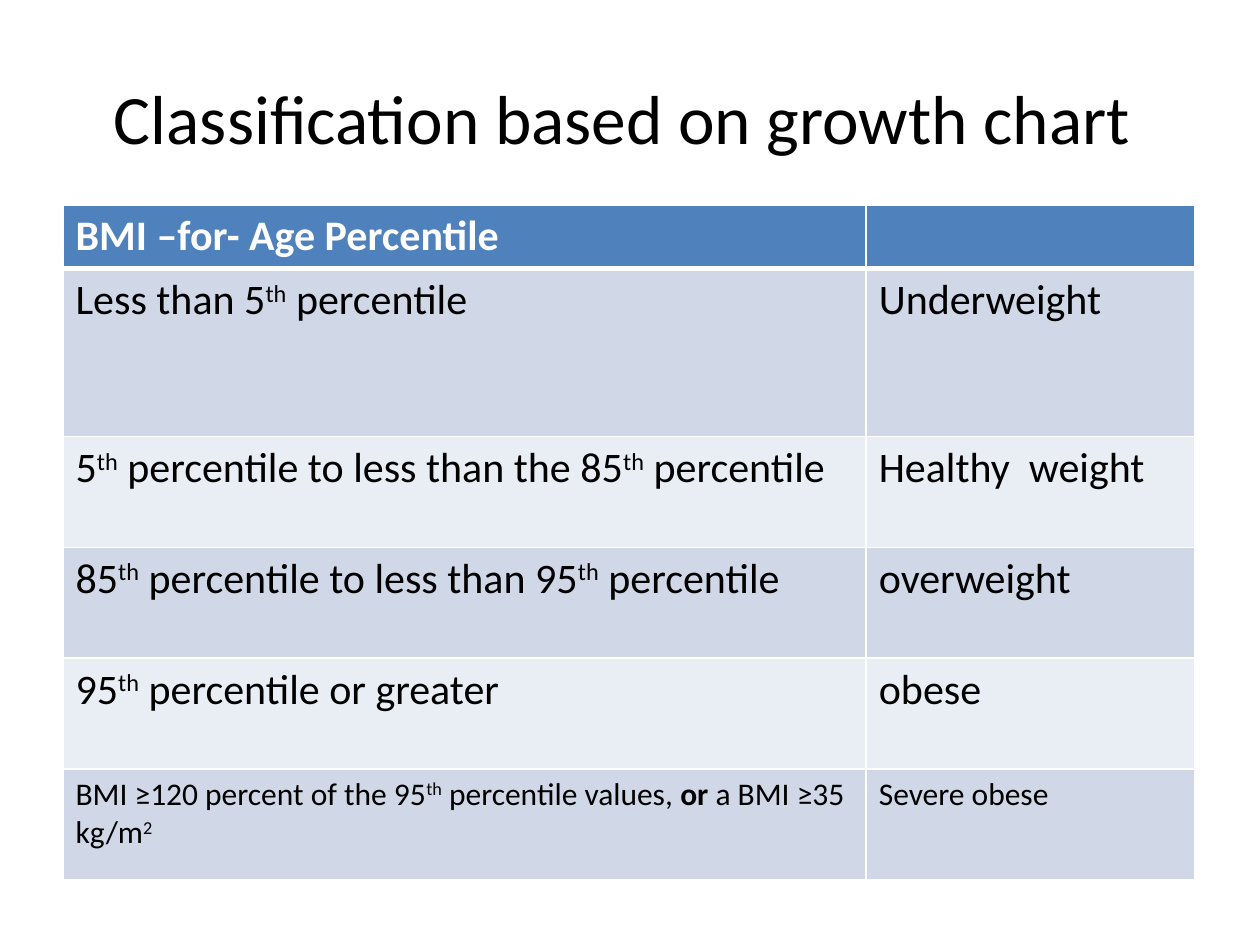
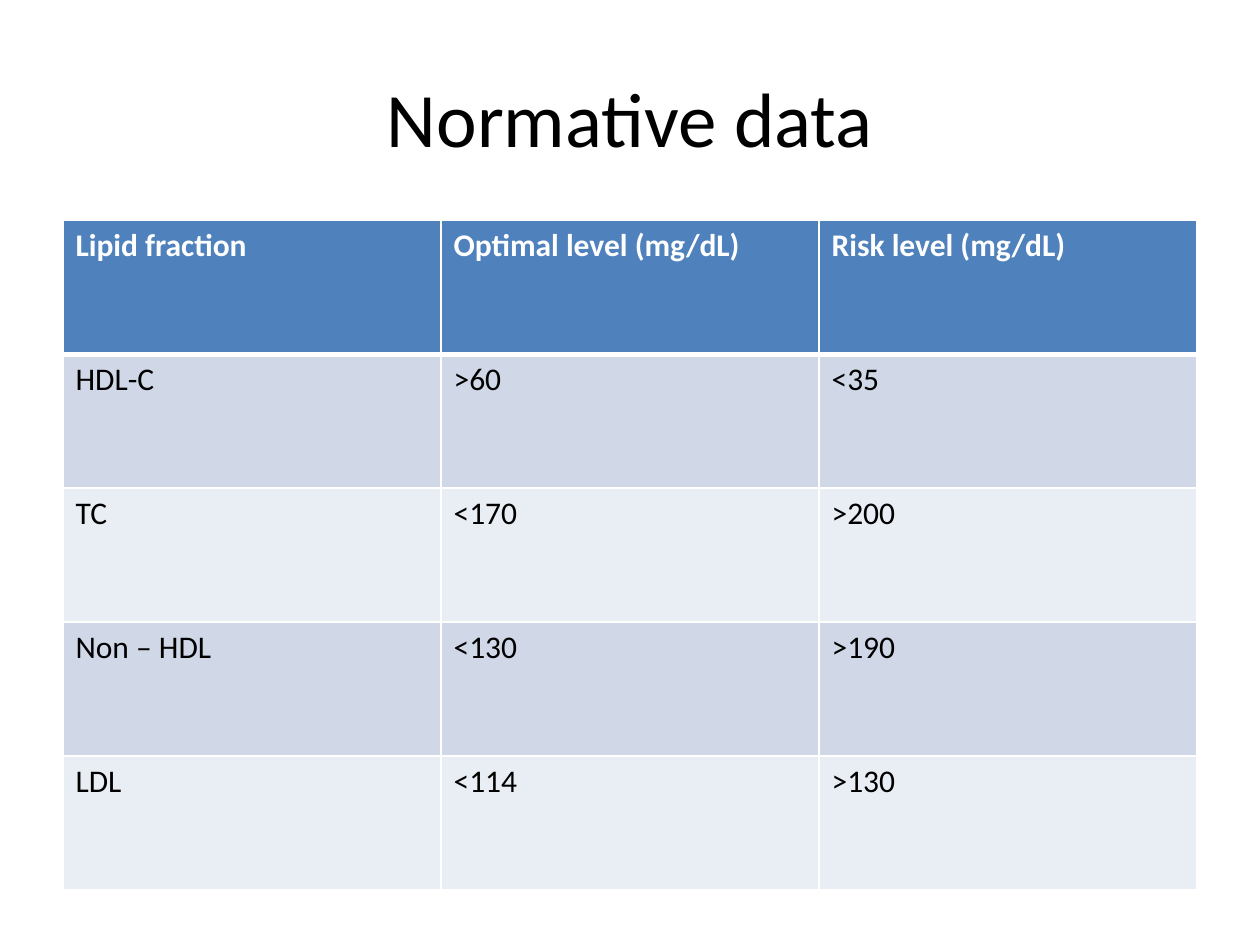
from lxml import etree
from pptx import Presentation
from pptx.dml.color import RGBColor
from pptx.enum import text as text_enum
from pptx.oxml import ns
from pptx.util import Pt

FONT = "Calibri"
COLORS = {
    "header": "4F81BD",
    "band_dark": "D0D8E8",
    "band_light": "E9EDF4",
    "white": "FFFFFF",
    "black": "000000",
}
TITLE_BOX = (36, 21.6, 648, 90)
TABLE_LEFT = 36
THIN, THICK = 1, 3

# In cell text, ^...^ marks superscript and *...* marks bold.
GROWTH_ROWS = [
    ["BMI –for- Age Percentile", ""],
    ["Less than 5^th^ percentile", "Underweight"],
    ["5^th^ percentile to less than the 85^th^ percentile", "Healthy  weight"],
    ["85^th^ percentile to less than 95^th^ percentile", "overweight"],
    ["95^th^ percentile or greater", "obese"],
    ["BMI ≥120 percent of the 95^th^ percentile values, *or* a BMI ≥35 kg/m^2^",
     "Severe obese"],
]
LIPID_ROWS = [
    ["Lipid fraction", "Optimal level (mg/dL)", "Risk level (mg/dL)"],
    ["HDL-C", ">60", "<35"],
    ["TC", "<170", ">200"],
    ["Non – HDL", "<130", ">190"],
    ["LDL", "<114", ">130"],
]


def write_text(text_frame, content, size=18, color="black", bold=False, align=None):
    """Write one paragraph, turning the marks into bold and superscript runs."""
    paragraph = text_frame.paragraphs[0]
    paragraph.alignment = align
    for bold_index, section in enumerate(content.split("*")):
        for raised_index, piece in enumerate(section.split("^")):
            if not piece:
                continue
            run = paragraph.add_run()
            run.text = piece
            run.font.name = FONT
            run.font.size = Pt(size)
            run.font.bold = bold or bold_index % 2 == 1
            run.font.color.rgb = RGBColor.from_string(COLORS[color])
            if raised_index % 2:
                run._r.get_or_add_rPr().set("baseline", "30000")


def set_borders(cell, **widths):
    """Draw white borders; the lines must come before the fill in the cell."""
    properties = cell._tc.get_or_add_tcPr()
    for index, side in enumerate("LRTB"):
        line = etree.Element(ns.qn(f"a:ln{side}"), w=str(Pt(widths.get(side, THIN))))
        fill = etree.SubElement(line, ns.qn("a:solidFill"))
        etree.SubElement(fill, ns.qn("a:srgbClr"), val=COLORS["white"])
        properties.insert(index, line)


def add_titled_slide(presentation, title, size):
    slide = presentation.slides.add_slide(presentation.slide_layouts[5])
    shape = slide.shapes.title
    shape.left, shape.top, shape.width, shape.height = map(Pt, TITLE_BOX)
    shape.text_frame.auto_size = text_enum.MSO_AUTO_SIZE.NONE
    shape.text_frame.vertical_anchor = text_enum.MSO_ANCHOR.MIDDLE
    write_text(shape.text_frame, title, size=size, align=text_enum.PP_ALIGN.CENTER)
    return slide


def add_banded_table(slide, rows, top, widths, heights, sizes):
    """Add a table with a header row; heights and sizes hold one entry per row."""
    frame = slide.shapes.add_table(
        len(rows), len(widths), Pt(TABLE_LEFT), Pt(top), Pt(sum(widths)), Pt(sum(heights)))
    table = frame.table
    for column, width in zip(table.columns, widths):
        column.width = Pt(width)
    for row_index, values in enumerate(rows):
        table.rows[row_index].height = Pt(heights[row_index])
        is_header = row_index == 0
        band = "header" if is_header else ("band_light", "band_dark")[row_index % 2]
        for column_index, value in enumerate(values):
            cell = table.cell(row_index, column_index)
            cell.fill.solid()
            cell.fill.fore_color.rgb = RGBColor.from_string(COLORS[band])
            set_borders(cell, T=THICK if row_index == 1 else THIN,
                        B=THICK if is_header else THIN)
            write_text(cell.text_frame, value, size=sizes[row_index], bold=is_header,
                       color="white" if is_header else "black")


def main():
    presentation = Presentation()
    presentation.slide_width, presentation.slide_height = Pt(720), Pt(540)

    # Weight classes by growth chart percentile
    slide = add_titled_slide(presentation, "Classification based on growth chart ", 39.6)
    add_banded_table(slide, GROWTH_ROWS, top=117, widths=[459, 188],
                     heights=[31, 96] + [63.3] * 4, sizes=[24] * 5 + [18])

    # Lipid levels
    slide = add_titled_slide(presentation, "Normative data", 44)
    add_banded_table(slide, LIPID_ROWS, top=126, widths=[216] * 3,
                     heights=[76.5] * 5, sizes=[18] * 5)

    presentation.save("out.pptx")


if __name__ == "__main__":
    main()
